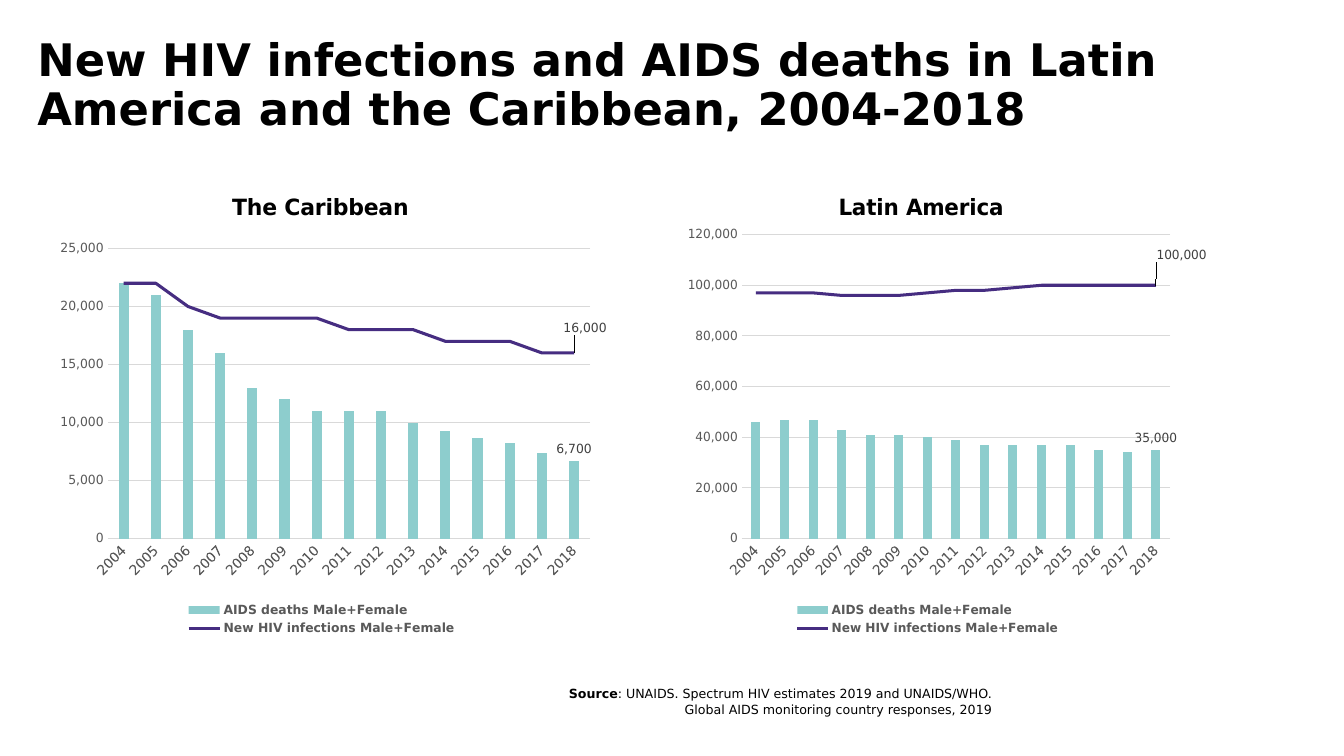
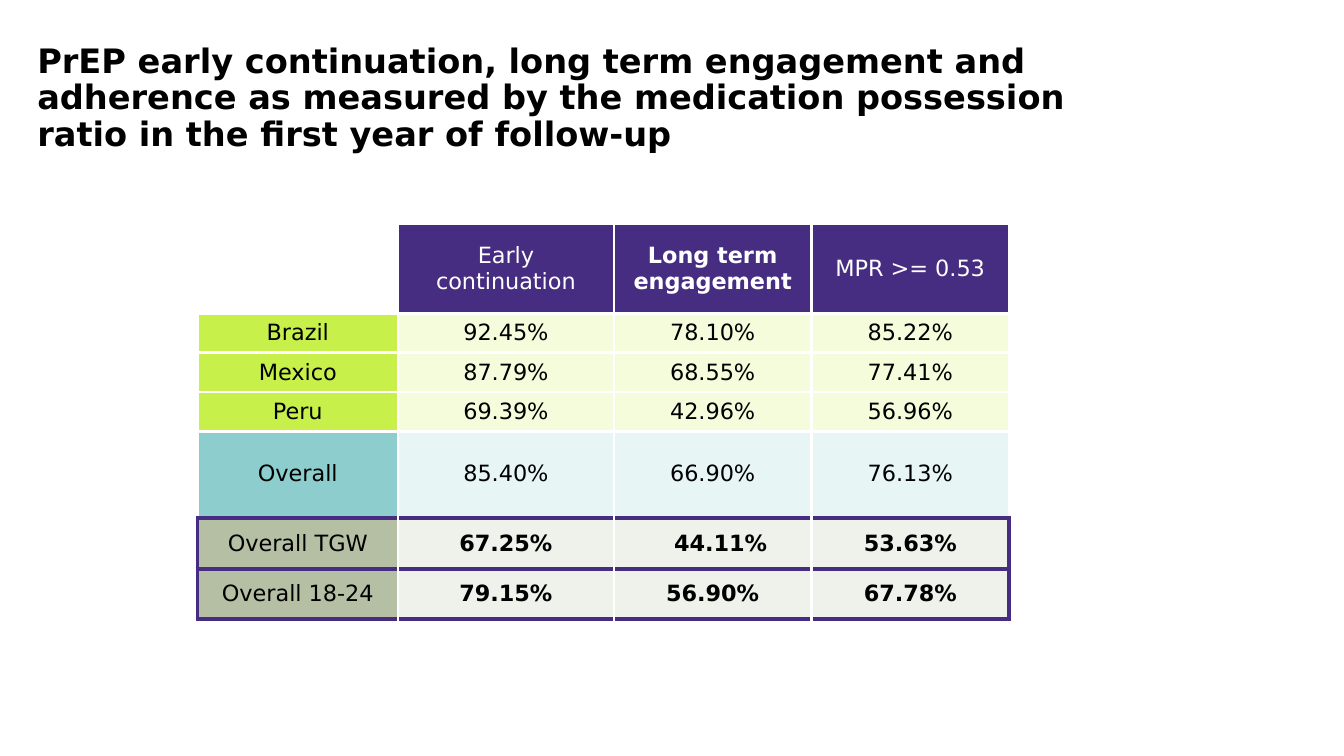
from copy import deepcopy

from pptx import Presentation
from pptx.chart.data import CategoryChartData
from pptx.dml.color import RGBColor
from pptx.enum.chart import XL_CHART_TYPE as ChartType
from pptx.enum.chart import XL_LABEL_POSITION as LabelPosition
from pptx.enum.chart import XL_LEGEND_POSITION as LegendPosition
from pptx.enum.chart import XL_MARKER_STYLE as MarkerStyle
from pptx.enum.chart import XL_TICK_MARK as TickMark
from pptx.enum.text import MSO_ANCHOR as Anchor
from pptx.enum.text import MSO_AUTO_SIZE as AutoSize
from pptx.enum.text import PP_ALIGN as Align
from pptx.oxml import parse_xml
from pptx.oxml.ns import nsdecls, qn
from pptx.util import Cm, Pt

FONT = "DejaVu Sans"
COLORS = {
    "black": "000000", "white": "FFFFFF", "purple": "462D81", "teal": "8DCDCD",
    "pale_teal": "E7F5F5", "lime": "C7F04A", "pale_lime": "F4FCDC",
    "sage": "B5BFA4", "pale_sage": "EFF1EB", "grid": "D9D9D9",
    "axis": "595959", "label": "404040",
}

TREND_TITLE = "New HIV infections and AIDS deaths in Latin America and the Caribbean, 2004-2018"
PREP_TITLE = ("PrEP early continuation, long term engagement and adherence as measured by "
              "the medication possession ratio in the first year of follow-up")
SOURCE = [
    ("Source", True),
    (": UNAIDS. Spectrum HIV estimates 2019 and UNAIDS/WHO. "
     "Global AIDS monitoring country responses, 2019", False),
]
YEARS = [str(year) for year in range(2004, 2019)]
DEATHS, INFECTIONS = "AIDS deaths Male+Female", "New HIV infections Male+Female"
REGIONS = [
    {
        "title": "The Caribbean", "box": (1.19, 4.52, 14.1, 11.61),
        "title_at": (0.33, 0.02), "plot": (0.11, 0.15, 0.88, 0.63), "label_shift": (0.02, -0.03),
        "deaths": [22000, 21000, 18000, 16000, 13000, 12000, 11000, 11000, 11000, 10000,
                   9300, 8700, 8200, 7400, 6700],
        "infections": [22000, 22000, 20000, 19000, 19000, 19000, 19000, 18000, 18000, 18000,
                       17000, 17000, 17000, 16000, 16000],
    },
    {
        "title": "Latin America", "box": (16.87, 4.52, 13.54, 11.61),
        "title_at": (0.32, 0.02), "plot": (0.14, 0.12, 0.83, 0.66), "label_shift": (0.05, -0.04),
        "deaths": [46000, 47000, 47000, 43000, 41000, 41000, 40000, 39000, 37000, 37000,
                   37000, 37000, 35000, 34000, 35000],
        "infections": [97000, 97000, 97000, 96000, 96000, 96000, 97000, 98000, 98000, 99000,
                       100000, 100000, 100000, 100000, 100000],
    },
]

COLUMNS = [5.05, 5.44, 4.98, 4.98]
TABLE_LEFT = 4.98
ROW_STYLES = {
    "header": {"fills": (None, "purple"), "ink": "white", "height": 2.26, "margins": (0.25, 0.13)},
    "country": {"fills": ("lime", "pale_lime"), "height": 0.99},
    "overall": {"fills": ("teal", "pale_teal"), "height": 2.16},
    "group": {"fills": ("sage", "pale_sage"), "height": 1.27, "framed": True},
}
TABLES = [
    (5.64, [
        ("header", ["", "Early continuation", "Long term engagement", "MPR >= 0.53"]),
        ("country", ["Brazil", "92.45%", "78.10%", "85.22%"]),
        ("country", ["Mexico", "87.79%", "68.55%", "77.41%"]),
        ("country", ["Peru", "69.39%", "42.96%", "56.96%"]),
        ("overall", ["Overall", "85.40%", "66.90%", "76.13%"]),
    ]),
    (13.06, [("group", ["Overall TGW", "67.25%", "44.11%", "53.63%"])]),
    (14.33, [("group", ["Overall 18-24", "79.15%", "56.90%", "67.78%"])]),
]
BOLD_HEADER = "Long term engagement"
INDENTS = {"44.11%": 0.4}


def rgb(name):
    return RGBColor.from_string(COLORS[name])


def style(font, size, color="black", bold=False):
    font.name, font.size, font.bold = FONT, Pt(size), bold
    font.color.rgb = rgb(color)


def add_page(deck, title, size, box, anchor):
    page = deck.slides.add_slide(deck.slide_layouts[5])
    heading = page.shapes.title
    heading.left, heading.top, heading.width, heading.height = map(Cm, box)
    frame = heading.text_frame
    frame.text = title
    frame.auto_size, frame.word_wrap, frame.vertical_anchor = AutoSize.NONE, True, anchor
    frame.margin_left = frame.margin_top = frame.margin_right = frame.margin_bottom = 0
    para = frame.paragraphs[0]
    para.alignment, para.line_spacing = Align.LEFT, 0.9
    style(para.runs[0].font, size, bold=True)
    return page


def set_layout(parent, index, values, modes):
    for old in parent.findall(qn("c:layout")):
        parent.remove(old)
    parts = "".join(f'<c:{mode} val="{kind}"/>' for mode, kind in modes)
    parts += "".join(f'<c:{key} val="{value}"/>' for key, value in zip("xywh", values))
    parent.insert(index, parse_xml(
        f'<c:layout {nsdecls("c")}><c:manualLayout>{parts}</c:manualLayout></c:layout>'))


def move_last_series_to_line(chart):
    bars = chart.plots[0]._element
    series = bars.findall(qn("c:ser"))[-1]
    line = parse_xml(f'<c:lineChart {nsdecls("c")}><c:grouping val="standard"/>'
                     '<c:varyColors val="0"/><c:marker val="1"/></c:lineChart>')
    for flag in series.findall(qn("c:invertIfNegative")):
        series.remove(flag)
    line.insert(2, series)
    for axis_id in bars.findall(qn("c:axId")):
        line.append(deepcopy(axis_id))
    bars.addnext(line)


def label_last_point(series, position):
    series.data_labels.show_value = False
    label = series.points[len(YEARS) - 1].data_label
    style(label.font, 9, "label")
    label.position = position


def shift_label(series, shift):
    labels = series.data_labels._element
    set_layout(labels.find(qn("c:dLbl")), 1, shift, [])
    labels.append(parse_xml(
        f'<c:extLst {nsdecls("c")}><c:ext uri="{{CE6537A1-D6FC-4f65-9D91-7224C49458BB}}" '
        'xmlns:c15="http://schemas.microsoft.com/office/drawing/2012/chart">'
        '<c15:showLeaderLines val="1"/></c:ext></c:extLst>'))


def style_axes(chart):
    years, counts = chart.category_axis, chart.value_axis
    for axis, size in ((years, 10), (counts, 9)):
        axis.major_tick_mark = axis.minor_tick_mark = TickMark.NONE
        style(axis.tick_labels.font, size, "axis")
    years._element.find(qn("c:txPr")).find(qn("a:bodyPr")).set("rot", "-2700000")
    counts.tick_labels.number_format = "#,##0"
    counts.tick_labels.number_format_is_linked = False
    counts.format.line.fill.background()
    for line in (years.format.line, counts.major_gridlines.format.line):
        line.color.rgb, line.width = rgb("grid"), Pt(0.75)


def add_region_chart(page, region):
    data = CategoryChartData(number_format="#,##0")
    data.categories = YEARS
    data.add_series(DEATHS, region["deaths"])
    data.add_series(INFECTIONS, region["infections"])
    chart = page.shapes.add_chart(
        ChartType.COLUMN_CLUSTERED, *map(Cm, region["box"]), data).chart
    style(chart.font, 10)
    move_last_series_to_line(chart)
    style_axes(chart)

    title = chart.chart_title
    title.text_frame.text = region["title"]
    style(title.text_frame.paragraphs[0].runs[0].font, 16, bold=True)
    title.include_in_layout = False
    edges = [("xMode", "edge"), ("yMode", "edge")]
    set_layout(title._element, 1, region["title_at"], edges)
    set_layout(chart._chartSpace.chart.plotArea, 0, region["plot"],
               [("layoutTarget", "inner")] + edges)

    chart.has_legend = True
    chart.legend.position = LegendPosition.BOTTOM
    chart.legend.include_in_layout = False
    style(chart.legend.font, 9, "axis", True)

    columns, line = chart.plots
    columns.gap_width, columns.vary_by_categories = 219, False
    deaths, infections = columns.series[0], line.series[0]
    deaths.format.fill.solid()
    deaths.format.fill.fore_color.rgb = rgb("teal")
    infections.format.line.color.rgb = rgb("purple")
    infections.format.line.width = Pt(2.25)
    infections.marker.style = MarkerStyle.NONE
    infections.smooth = False
    label_last_point(deaths, LabelPosition.OUTSIDE_END)
    label_last_point(infections, LabelPosition.ABOVE)
    shift_label(infections, region["label_shift"])


def add_source(page):
    box = page.shapes.add_textbox(Cm(13.61), Cm(17.17), Cm(11.63), Cm(1.02))
    box.text_frame.word_wrap = True
    para = box.text_frame.paragraphs[0]
    para.alignment = Align.RIGHT
    for text, bold in SOURCE:
        span = para.add_run()
        span.text = text
        style(span.font, 9, bold=bold)


def set_borders(cell, purple_sides):
    properties = cell._tc.get_or_add_tcPr()
    for index, side in enumerate("LRTB"):
        color, width = ("purple", 3) if side in purple_sides else ("white", 2.25)
        properties.insert(index, parse_xml(
            f'<a:ln{side} {nsdecls("a")} w="{Pt(width)}"><a:solidFill>'
            f'<a:srgbClr val="{COLORS[color]}"/></a:solidFill></a:ln{side}>'))


def fill_cell(cell, text, column, look):
    fill = look["fills"][min(column, 1)]
    if fill:
        cell.fill.solid()
        cell.fill.fore_color.rgb = rgb(fill)
    else:
        cell.fill.background()
    side, edge = look.get("margins", (0.18, 0))
    cell.margin_left, cell.margin_right = Cm(side + INDENTS.get(text, 0)), Cm(side)
    cell.margin_top = cell.margin_bottom = Cm(edge)
    cell.vertical_anchor = Anchor.MIDDLE
    cell.text = text
    para = cell.text_frame.paragraphs[0]
    para.alignment = Align.CENTER
    framed = look.get("framed", False)
    for span in para.runs:
        style(span.font, 16, look.get("ink", "black"),
              text == BOLD_HEADER or (framed and column > 0))
    outer = {0: "L", len(COLUMNS) - 1: "R"}.get(column, "")
    set_borders(cell, "TB" + outer if framed else "")


def add_rate_table(page, top, rows):
    heights = [ROW_STYLES[kind]["height"] for kind, _ in rows]
    table = page.shapes.add_table(len(rows), len(COLUMNS), Cm(TABLE_LEFT), Cm(top),
                                  Cm(sum(COLUMNS)), Cm(sum(heights))).table
    table.first_row = table.horz_banding = False
    for column, width in zip(table.columns, COLUMNS):
        column.width = Cm(width)
    for index, (kind, texts) in enumerate(rows):
        table.rows[index].height = Cm(heights[index])
        for column, text in enumerate(texts):
            fill_cell(table.cell(index, column), text, column, ROW_STYLES[kind])


def main():
    deck = Presentation()
    deck.slide_width, deck.slide_height = Cm(33.87), Cm(19.05)

    page = add_page(deck, TREND_TITLE, 32, (0.94, 1.12, 29.39, 2.11), Anchor.MIDDLE)
    for region in REGIONS:
        add_region_chart(page, region)
    add_source(page)

    page = add_page(deck, PREP_TITLE, 24, (0.94, 1.12, 28.27, 3.1), Anchor.TOP)
    for top, rows in TABLES:
        add_rate_table(page, top, rows)

    deck.save("out.pptx")


if __name__ == "__main__":
    main()
